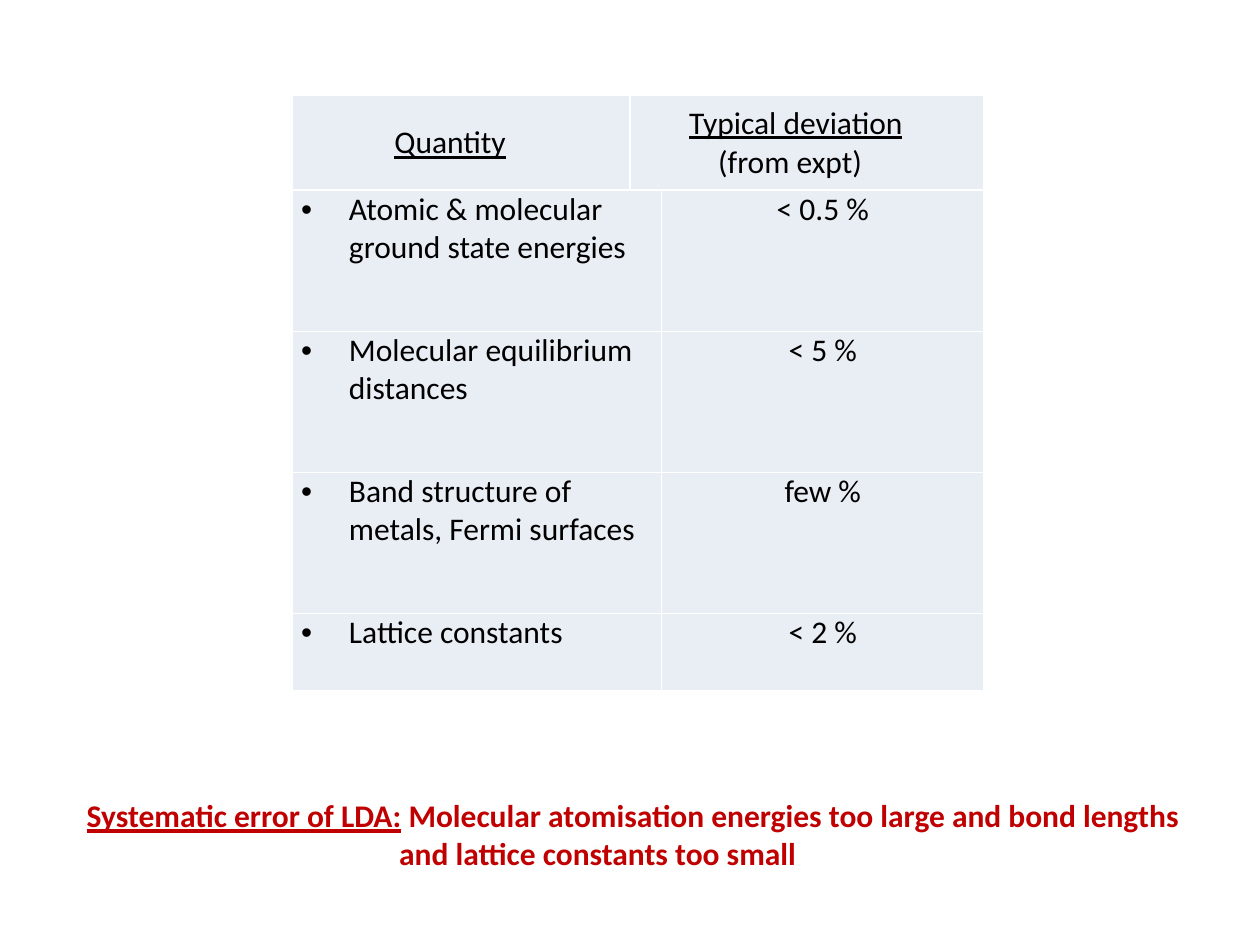
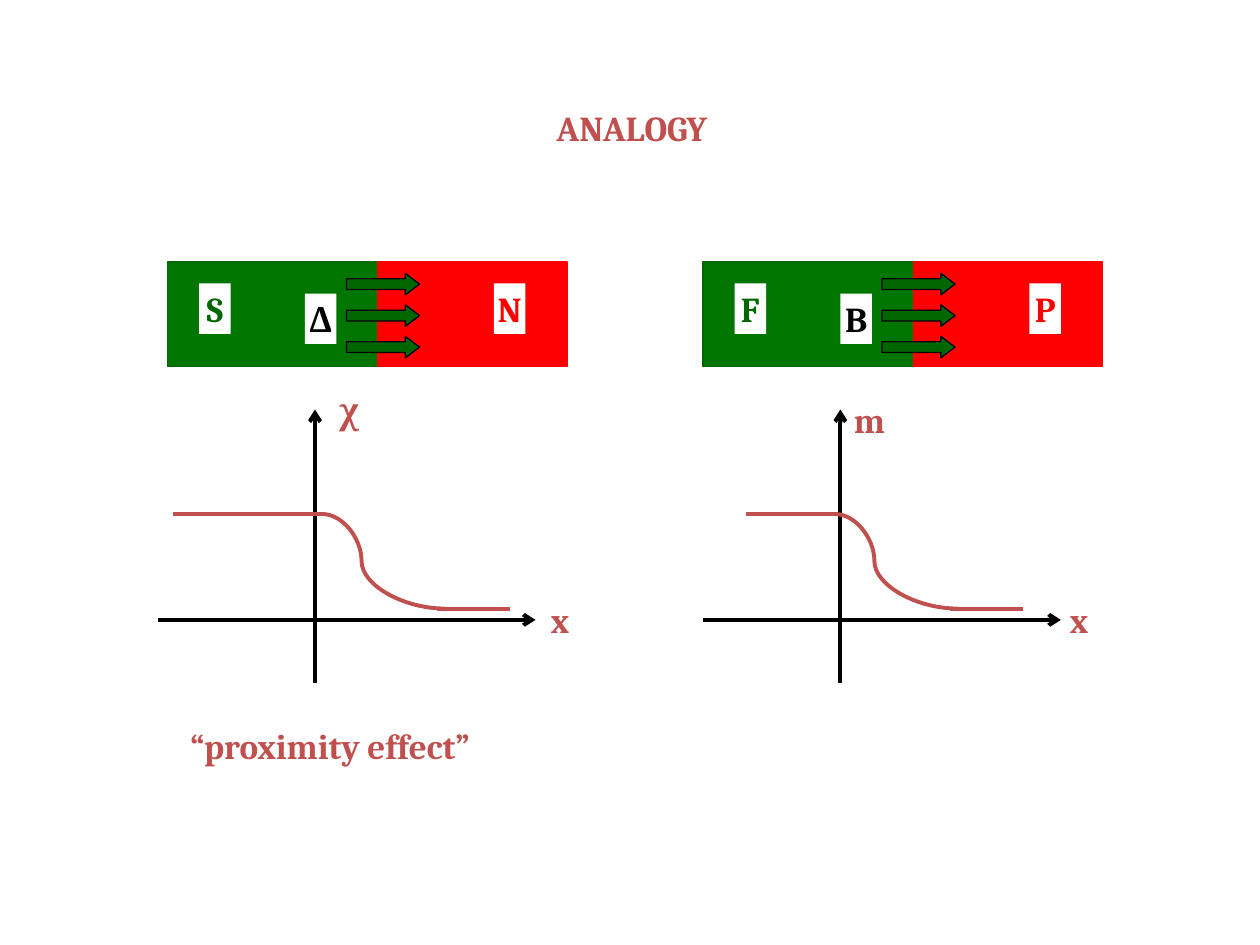
"""Build two physics slides: LDA accuracy and the proximity analogy."""
from dataclasses import dataclass

from lxml import etree
from pptx import Presentation
from pptx.dml.color import RGBColor
from pptx.enum import shapes, text
from pptx.oxml.ns import qn
from pptx.util import Inches, Pt

COLORS = {
    "black": "000000", "white": "FFFFFF", "cell": "E9EDF4", "warning": "C00000",
    "accent": "C0504D", "green": "007600", "dark_green": "006600", "red": "FF0000",
}
BODY_FONT, DIAGRAM_FONT = "Calibri", "Cambria"
BODY_SIZE, DIAGRAM_SIZE = 18, 20
CENTER = text.PP_ALIGN.CENTER


@dataclass
class Box:
    """A rectangle in inches."""
    left: float
    top: float
    width: float
    height: float

    def lengths(self):
        """Return the four lengths for python-pptx."""
        return [Inches(n) for n in (self.left, self.top, self.width, self.height)]

    def inner(self, left, top, width, height):
        """Return a box placed relative to this one."""
        return Box(self.left + left, self.top + top, width, height)


def rgb(name):
    """Look up a colour by name."""
    return RGBColor.from_string(COLORS[name])


def style(para, font, size, color, bold=False, align=None):
    """Format a whole paragraph."""
    para.font.name, para.font.size, para.font.bold = font, Pt(size), bold
    para.font.color.rgb = rgb(color)
    para.alignment = align


def indent(para, left, first=0.0):
    """Set the left margin and first-line indent of a paragraph."""
    properties = para._p.get_or_add_pPr()
    properties.set("marL", str(Inches(left)))
    properties.set("indent", str(Inches(first)))
    return properties


def add_spans(para, *spans):
    """Add (words, underlined) spans to a paragraph."""
    for words, underlined in spans:
        span = para.add_run()
        span.text = words
        span.font.underline = underlined


def format_cell(cell):
    """Give a cell its fill, margins and white borders."""
    cell.fill.solid()
    cell.fill.fore_color.rgb = rgb("cell")
    cell.margin_left = cell.margin_right = Inches(0.07)
    cell.margin_top = cell.margin_bottom = 0
    properties = cell._tc.get_or_add_tcPr()
    for position, side in enumerate(("lnL", "lnR", "lnT", "lnB")):
        border = etree.Element(qn(f"a:{side}"), w=str(Pt(1)))
        fill = etree.SubElement(border, qn("a:solidFill"))
        etree.SubElement(fill, qn("a:srgbClr"), val=COLORS["white"])
        properties.insert(position, border)


def add_deviation_table(page, box):
    """Add the table of typical deviations."""
    records = [
        ("Atomic & molecular ground state energies", "< 0.5 %"),
        ("Molecular equilibrium distances", "< 5 %"),
        ("Band structure of metals, Fermi surfaces", "few %"),
        ("Lattice constants", "< 2 %"),
    ]
    table = page.shapes.add_table(5, 3, *box.lengths()).table
    for column, width in zip(table.columns, (2.68, 0.25, 2.56)):
        column.width = Inches(width)
    for row, height in zip(table.rows, (0.75, 1.12, 1.12, 1.12, 0.61)):
        row.height = Inches(height)
    for cell in table.iter_cells():
        format_cell(cell)
    table.cell(0, 1).merge(table.cell(0, 2))

    headers = [
        (0, [("Quantity", True, 0.74)]),
        (1, [("Typical deviation", True, 0.4), ("(from expt)", False, 0.63)]),
    ]
    for column, lines in headers:
        cell = table.cell(0, column)
        cell.vertical_anchor = text.MSO_ANCHOR.MIDDLE
        for number, (words, underlined, margin) in enumerate(lines):
            frame = cell.text_frame
            para = frame.add_paragraph() if number else frame.paragraphs[0]
            indent(para, margin)
            add_spans(para, (words, underlined))
            style(para, BODY_FONT, BODY_SIZE, "black")

    for row, (quantity, deviation) in enumerate(records, 1):
        table.cell(row, 0).merge(table.cell(row, 1))
        for column, words, align in ((0, quantity, None), (2, deviation, CENTER)):
            para = table.cell(row, column).text_frame.paragraphs[0]
            para.text = words
            if column == 0:
                properties = indent(para, 0.38, -0.38)
                etree.SubElement(properties, qn("a:buFont"), typeface="Arial")
                etree.SubElement(properties, qn("a:buChar"), char="•")
            style(para, BODY_FONT, BODY_SIZE, "black", align=align)


def add_error_note(page, box):
    """Add the remark on the systematic error."""
    frame = page.shapes.add_textbox(*box.lengths()).text_frame
    frame.word_wrap = True
    first, second = frame.paragraphs[0], frame.add_paragraph()
    add_spans(first, ("Systematic error of LDA:", True),
              (" Molecular atomisation energies too large and bond lengths", False))
    add_spans(second, ("and lattice constants too small", False))
    indent(second, 2.48)
    for para in (first, second):
        style(para, BODY_FONT, BODY_SIZE, "warning", bold=True)


def write_label(shape, words, color="accent"):
    """Write one centred bold label in a shape."""
    frame = shape.text_frame
    frame.text = words
    frame.word_wrap = False
    frame.auto_size = text.MSO_AUTO_SIZE.NONE
    frame.vertical_anchor = text.MSO_ANCHOR.MIDDLE
    style(frame.paragraphs[0], DIAGRAM_FONT, DIAGRAM_SIZE, color, True, CENTER)


def add_label(parent, box, words):
    """Add a text box holding one label."""
    write_label(parent.shapes.add_textbox(*box.lengths()), words)


def add_block(parent, box, fill, line=None, kind=shapes.MSO_SHAPE.RECTANGLE):
    """Add a filled shape with an optional outline."""
    block = parent.shapes.add_shape(kind, *box.lengths())
    block.shadow.inherit = False
    block.fill.solid()
    block.fill.fore_color.rgb = rgb(fill)
    if line:
        block.line.color.rgb = rgb(line)
        block.line.width = Pt(0.75)
    else:
        block.line.fill.background()
    return block


def add_line(parent, start, end, color, arrow=False, bend=None):
    """Add a straight line, or a curve bending at a share of its width."""
    kind = shapes.MSO_CONNECTOR.STRAIGHT if bend is None else shapes.MSO_CONNECTOR.CURVE
    line = parent.shapes.add_connector(kind, *[Inches(n) for n in (*start, *end)])
    line.line.color.rgb = rgb(color)
    line.line.width = Pt(2.25)
    properties = line._element.spPr
    if arrow:
        etree.SubElement(properties.find(qn("a:ln")), qn("a:tailEnd"), type="arrow")
    if bend is not None:
        guides = properties.find(".//" + qn("a:avLst"))
        etree.SubElement(guides, qn("a:gd"), name="adj1", fmla=f"val {round(bend * 100000)}")
    etree.SubElement(properties, qn("a:effectLst"))


def add_junction(page, box, left_name, right_name, field_name):
    """Add two touching materials with the field leaking across."""
    group = page.shapes.add_group_shape()
    add_block(group, box.inner(0, 0, 1.67, box.height), "green", "dark_green")
    add_block(group, box.inner(1.67, 0, box.width - 1.67, box.height), "red", "red")
    for number in range(3):
        arrow = add_block(group, box.inner(1.42, 0.09 + 0.25 * number, 0.58, 0.17),
                          "dark_green", "black", shapes.MSO_SHAPE.RIGHT_ARROW)
        arrow.adjustments[0], arrow.adjustments[1] = 0.5, 0.66
    tags = [(0.25, 0.17, left_name, "dark_green"), (2.59, 0.17, right_name, "red"),
            (1.09, 0.25, field_name, "black")]
    for left, top, words, color in tags:
        tag = add_block(group, box.inner(left, top, 0.25, 0.4), "white")
        frame = tag.text_frame
        frame.margin_left = frame.margin_right = Inches(0.01)
        frame.margin_top = frame.margin_bottom = 0
        write_label(tag, words, color)


def add_decay_graph(page, box, plateau_left, curve_left, quantity, quantity_box, x_left):
    """Add axes and a curve that falls from a plateau to a low tail."""
    group = page.shapes.add_group_shape()
    right, bottom = box.left + box.width, box.top + box.height
    origin, axis = right - 1.75, box.top + 1.67
    high, low = box.top + 0.83, box.top + 1.58
    curve = box.left + curve_left
    add_line(group, (origin, bottom), (origin, box.top), "black", arrow=True)
    add_line(group, (box.left, axis), (right, axis), "black", arrow=True)
    add_line(group, (box.left + plateau_left, high), (curve + 0.02, high), "accent")
    add_line(group, (curve + 0.91, low), (curve + 1.49, low), "accent")
    add_line(group, (curve, high), (curve + 0.97, low), "accent", bend=0.32)
    add_label(group, box.inner(*quantity_box), quantity)
    add_label(group, box.inner(x_left, 1.42, 0.37, 0.5), "x")


def build_accuracy_slide(deck):
    """Build the slide on the accuracy of LDA."""
    page = deck.slides.add_slide(deck.slide_layouts[6])
    add_deviation_table(page, Box(2.32, 0.76, 5.49, 4.72))
    add_error_note(page, Box(0.59, 6.27, 9, 0.71))


def build_analogy_slide(deck):
    """Build the slide comparing the two junctions."""
    page = deck.slides.add_slide(deck.slide_layouts[5])
    title = page.shapes.title
    title.left, title.top, title.width, title.height = Box(4.06, 0.76, 1.91, 0.5).lengths()
    write_label(title, "ANALOGY")
    for left, names in ((1.33, "SNΔ"), (5.58, "FPB")):
        add_junction(page, Box(left, 2.08, 3.17, 0.83), *names)
    add_decay_graph(page, Box(1.25, 3.25, 3, 2.17), 0.12, 1.31,
                    "χ", (1.33, -0.25, 0.38, 0.5), 3.01)
    add_decay_graph(page, Box(5.58, 3.25, 2.84, 2.17), 0.34, 1.05,
                    "m", (1.08, -0.17, 0.48, 0.5), 2.8)
    add_label(page, Box(1.22, 5.67, 2.8, 0.5), "“proximity effect”")


def main():
    """Build and save the deck."""
    deck = Presentation()
    deck.slide_width, deck.slide_height = Inches(10), Inches(7.5)
    build_accuracy_slide(deck)
    build_analogy_slide(deck)
    deck.save("out.pptx")


if __name__ == "__main__":
    main()
